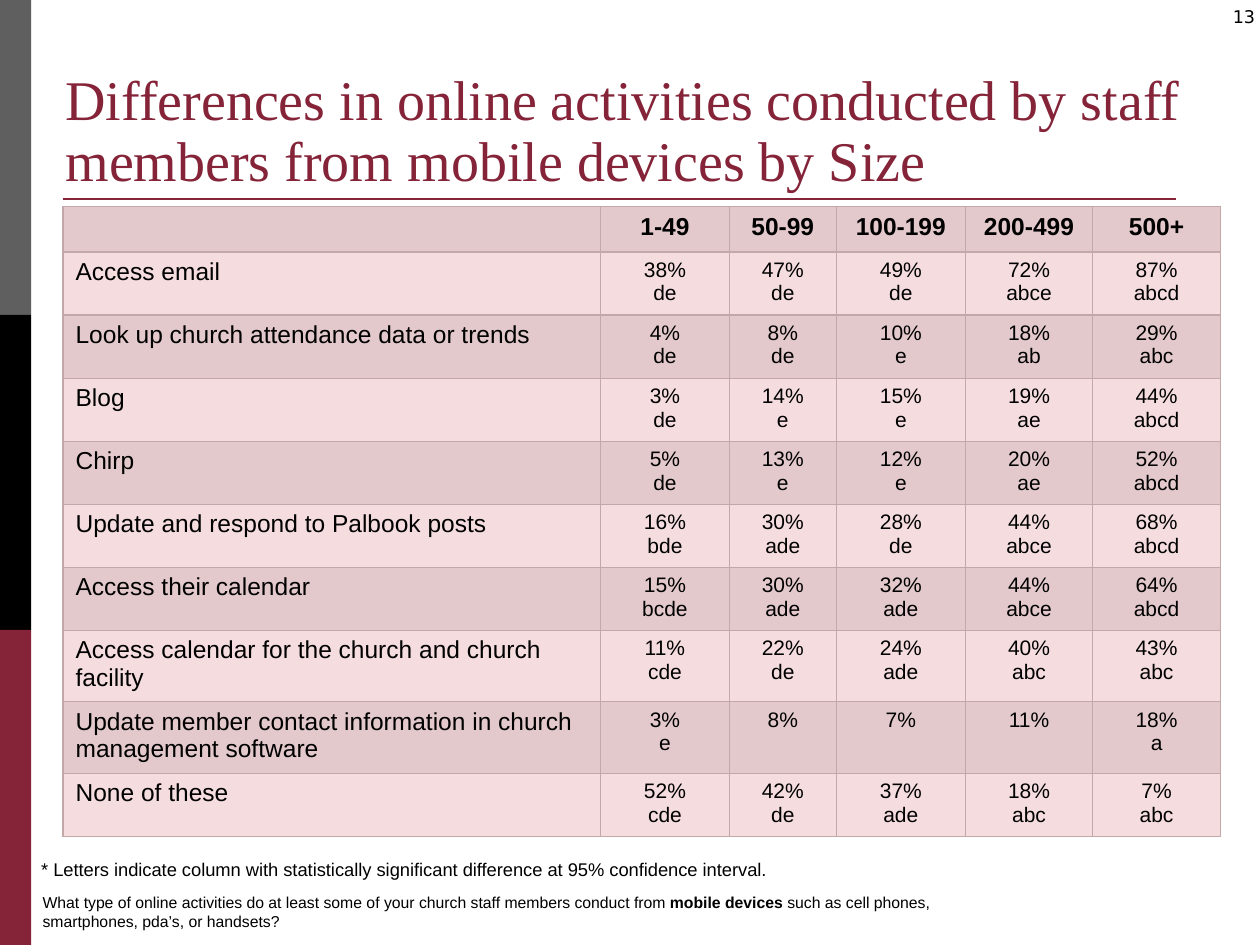
from copy import deepcopy
from lxml.etree import SubElement
from pptx import Presentation
from pptx.dml.color import RGBColor
from pptx.enum.shapes import MSO_CONNECTOR as Connector, MSO_SHAPE as Shape
from pptx.enum.text import MSO_ANCHOR as Anchor, PP_ALIGN as Align
from pptx.oxml.ns import qn
from pptx.util import Cm, Pt

BURGUNDY = RGBColor(0x85, 0x23, 0x38)
GRAY = RGBColor(0x5F, 0x5F, 0x5F)
BLACK = RGBColor(0, 0, 0)
LIGHT_PINK = RGBColor(0xF5, 0xDD, 0xDF)
DARK_PINK = RGBColor(0xE3, 0xC9, 0xCB)
BORDER = RGBColor(0xC3, 0xA8, 0xAA)

TITLE = {"name": "Times New Roman", "size": Pt(32)}
NUMBER = {"name": "DejaVu Sans", "size": Pt(10)}
HEADER = {"name": "Arial", "size": Pt(14), "bold": True}
LABEL = {"name": "Arial", "size": Pt(14), "bold": False}
VALUE = {"name": "Arial", "size": Pt(12), "bold": False}
FOOTNOTE = {"name": "Arial", "size": Pt(10.5)}
QUESTION = {"name": "Arial", "size": Pt(9), "bold": False}

GROUPS = ["1-49", "50-99", "100-199", "200-499", "500+"]
ACTIVITIES = [
    ("Access email", "38% de", "47% de", "49% de", "72% abce", "87% abcd"),
    ("Look up church attendance data or trends", "4% de", "8% de", "10% e", "18% ab", "29% abc"),
    ("Blog", "3% de", "14% e", "15% e", "19% ae", "44% abcd"),
    ("Chirp", "5% de", "13% e", "12% e", "20% ae", "52% abcd"),
    ("Update and respond to Palbook posts", "16% bde", "30% ade", "28% de", "44% abce", "68% abcd"),
    ("Access their calendar", "15% bcde", "30% ade", "32% ade", "44% abce", "64% abcd"),
    ("Access calendar for the church and church facility",
     "11% cde", "22% de", "24% ade", "40% abc", "43% abc"),
    ("Update member contact information in church management software",
     "3% e", "8%", "7%", "11%", "18% a"),
    ("None of these", "52% cde", "42% de", "37% ade", "18% abc", "7% abc"),
]
COLUMN_WIDTHS = [10.84, 2.59, 2.16, 2.6, 2.57, 2.57]
ROW_HEIGHTS = [0.91] + [1.2] * 6 + [1.37] * 2 + [1.2]


def write(paragraph, text, formats, color=BLACK, align=Align.LEFT):
    paragraph.alignment = align
    run = paragraph.add_run()
    run.text = text
    for name, value in formats.items():
        setattr(run.font, name, value)
    run.font.color.rgb = color
    return run


def add_text_box(left, top, width, height, anchor=Anchor.TOP):
    frame = slide.shapes.add_textbox(Cm(left), Cm(top), Cm(width), Cm(height)).text_frame
    frame.word_wrap = True
    frame.vertical_anchor = anchor
    return frame


presentation = Presentation()
presentation.slide_width, presentation.slide_height = Cm(25.4), Cm(19.05)
slide = presentation.slides.add_slide(presentation.slide_layouts[6])

band_height = 19.05 / 3
for index, color in enumerate([GRAY, BLACK, BURGUNDY]):
    band = slide.shapes.add_shape(
        Shape.RECTANGLE, 0, Cm(index * band_height), Cm(0.63), Cm(band_height))
    band.shadow.inherit = False
    band.fill.solid()
    band.fill.fore_color.rgb = color
    band.line.fill.background()

rule = slide.shapes.add_connector(Connector.STRAIGHT, Cm(1.27), Cm(4.01), Cm(23.7), Cm(4.01))
rule.line.color.rgb = BURGUNDY
rule.line.width = Pt(1.5)
SubElement(rule._element.spPr, qn("a:effectLst"))

number_frame = add_text_box(24.13, 0, 1.27, 0.84)
number_frame.margin_right = Cm(0.1)
write(number_frame.paragraphs[0], "13", NUMBER, align=Align.RIGHT)

title_frame = add_text_box(1.07, 1.4, 23.06, 2.62, Anchor.BOTTOM)
title_frame.margin_right = 0
title = title_frame.paragraphs[0]
title.line_spacing = 0.9
write(title, "Differences in online activities conducted by staff members "
      "from mobile devices by Size", TITLE, BURGUNDY)

rows = [("", *GROUPS), *ACTIVITIES]
table = slide.shapes.add_table(
    len(rows), len(COLUMN_WIDTHS), Cm(1.27), Cm(4.17),
    Cm(sum(COLUMN_WIDTHS)), Cm(sum(ROW_HEIGHTS))).table
table.first_row = False
table.horz_banding = False
for column, width in zip(table.columns, COLUMN_WIDTHS):
    column.width = Cm(width)

for row_index, texts in enumerate(rows):
    table.rows[row_index].height = Cm(ROW_HEIGHTS[row_index])
    for column_index, text in enumerate(texts):
        cell = table.cell(row_index, column_index)
        properties = cell._tc.get_or_add_tcPr()
        for side in ("lnL", "lnR", "lnT", "lnB"):
            border = SubElement(properties, qn(f"a:{side}"), w=str(Pt(0.75)))
            border_fill = SubElement(border, qn("a:solidFill"))
            SubElement(border_fill, qn("a:srgbClr"), val=str(BORDER))
        cell.fill.solid()
        cell.fill.fore_color.rgb = LIGHT_PINK if row_index % 2 else DARK_PINK

        paragraph = cell.text_frame.paragraphs[0]
        if not text:
            SubElement(paragraph._p, qn("a:endParaRPr"), sz="1400")
        elif column_index == 0:
            write(paragraph, text, LABEL)
        else:
            formats = VALUE if row_index else HEADER
            percent, _, letters = text.partition(" ")
            run = write(paragraph, percent, formats, align=Align.CENTER)
            if letters:
                line_break = SubElement(paragraph._p, qn("a:br"))
                line_break.append(deepcopy(run._r.rPr))
                write(paragraph, letters, formats, align=Align.CENTER)

question = add_text_box(0.61, 17.88, 19.46, 1.02).paragraphs[0]
write(question, "What type of online activities do at least some of your church staff "
      "members conduct from ", QUESTION)
write(question, "mobile devices", {**QUESTION, "bold": True})
write(question, " such as cell phones, smartphones, pda’s, or handsets?", QUESTION)

footnote = add_text_box(0.58, 17.17, 15.88, 0.71).paragraphs[0]
write(footnote, "* Letters indicate column with statistically significant difference "
      "at 95% confidence interval.", FOOTNOTE)

presentation.save("out.pptx")
